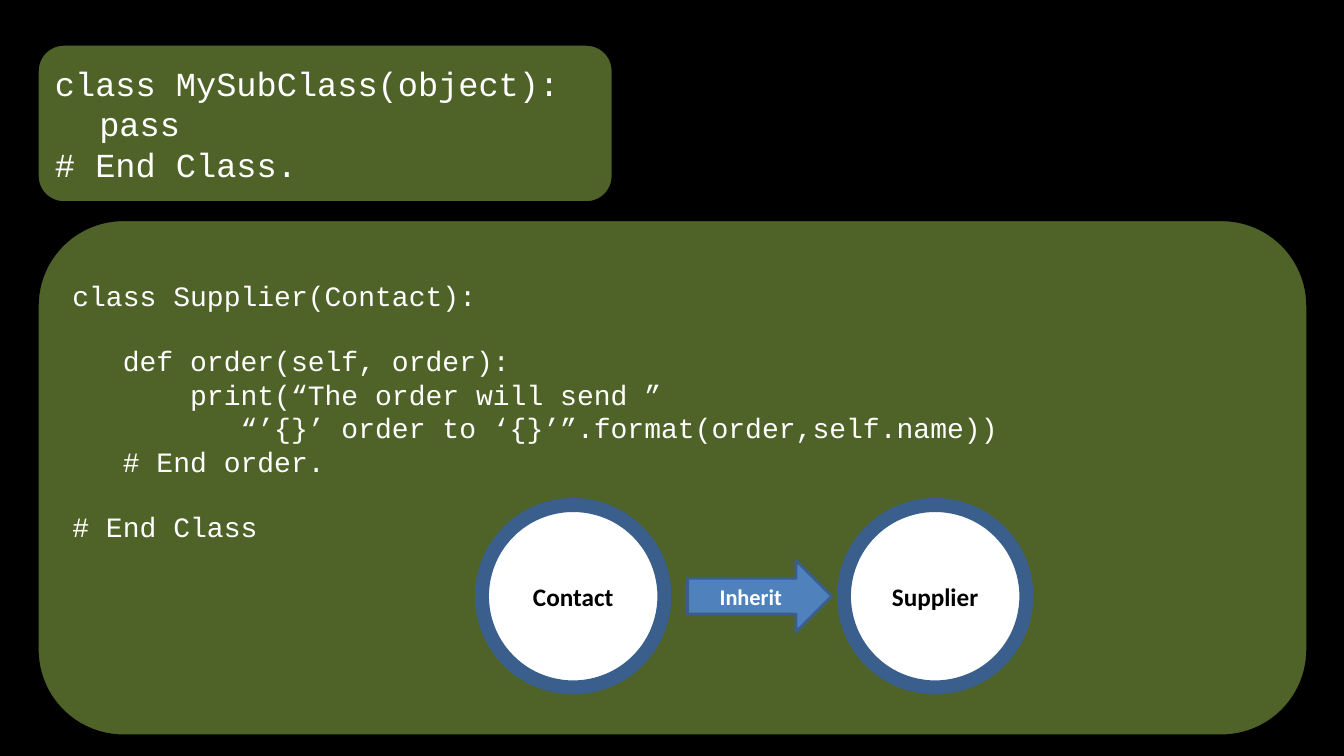
from dataclasses import dataclass

import pptx
import pptx.dml.color
import pptx.enum.shapes
import pptx.enum.text
import pptx.util

Inches = pptx.util.Inches
Pt = pptx.util.Pt
SHAPE = pptx.enum.shapes.MSO_SHAPE
ALIGN = pptx.enum.text.PP_ALIGN
ANCHOR = pptx.enum.text.MSO_ANCHOR


def rgb(code):
    return pptx.dml.color.RGBColor.from_string(code)


@dataclass(frozen=True)
class Theme:
    background: str = "000000"
    panel: str = "4F6228"
    panel_line: str = "000000"
    code_text: str = "FFFFFF"
    circle: str = "FFFFFF"
    circle_text: str = "000000"
    arrow: str = "4F81BD"
    arrow_text: str = "FFFFFF"
    diagram_line: str = "3A5F8C"
    code_font: str = "Courier New"
    label_font: str = "Calibri"
    short_code_size: int = 24
    long_code_size: int = 20
    circle_size: int = 18
    arrow_size: int = 16
    thin_line: int = 2
    thick_line: int = 10


THEME = Theme()
CODE_LINE_HEIGHT = 1.133  # line height of the code font, in ems

# Each code line: text, left margin in inches, skipped lines before it
SUBCLASS_CODE = [
    ("class MySubClass(object):", 0, 0),
    ("pass", 0.44, 0),
    ("# End Class.", 0, 0),
]
SUPPLIER_CODE = [
    ("class Supplier(Contact):", 0, 0),
    ("   def order(self, order):", 0, 1),
    ("       print(“The order will send ”", 0, 0),
    ("          “’{}’ order to ‘{}’”.format(order,self.name))", 0, 0),
    ("   # End order.", 0, 0),
    ("# End Class", 0, 1),
]


def add_box(s, kind, box, fill, line, line_width):
    sp = s.shapes.add_shape(kind, *(Inches(v) for v in box))
    sp.shadow.inherit = False
    sp.fill.solid()
    sp.fill.fore_color.rgb = rgb(fill)
    sp.line.color.rgb = rgb(line)
    sp.line.width = Pt(line_width)
    sp.text_frame.word_wrap = True
    return sp


def style_font(p, name, size, color, bold=False):
    p.font.name = name
    p.font.size = Pt(size)
    p.font.color.rgb = rgb(color)
    p.font.bold = bold


def add_code_panel(s, box, lines, size, anchor=ANCHOR.MIDDLE, top_margin=0.05):
    sp = add_box(s, SHAPE.ROUNDED_RECTANGLE, box, THEME.panel,
                 THEME.panel_line, THEME.thin_line)
    tf = sp.text_frame
    tf.vertical_anchor = anchor
    tf.margin_top = Inches(top_margin)
    for i, (text, margin, skipped) in enumerate(lines):
        p = tf.add_paragraph() if i else tf.paragraphs[0]
        p.text = text
        p.alignment = ALIGN.LEFT
        if margin:
            p._p.get_or_add_pPr().set("marL", str(Inches(margin)))
        if skipped:
            p.space_before = Pt(skipped * size * CODE_LINE_HEIGHT)
        style_font(p, THEME.code_font, size, THEME.code_text)


def add_label(sp, text, size, color):
    tf = sp.text_frame
    tf.vertical_anchor = ANCHOR.MIDDLE
    p = tf.paragraphs[0]
    p.text = text
    p.alignment = ALIGN.CENTER
    style_font(p, THEME.label_font, size, color, bold=True)


def add_inheritance_diagram(s, box):
    """Put a circle at each end of the box and an arrow between them."""
    left, top, width, diameter = box
    for name, x in (("Contact", left), ("Supplier", left + width - diameter)):
        circle = add_box(s, SHAPE.OVAL, (x, top, diameter, diameter),
                         THEME.circle, THEME.diagram_line, THEME.thick_line)
        add_label(circle, name, THEME.circle_size, THEME.circle_text)

    arrow_width, arrow_height = 1.43, 0.71
    arrow_box = (left + diameter + 0.23, top + (diameter - arrow_height) / 2,
                 arrow_width, arrow_height)
    arrow = add_box(s, SHAPE.RIGHT_ARROW, arrow_box, THEME.arrow,
                    THEME.diagram_line, THEME.thin_line)
    add_label(arrow, "Inherit", THEME.arrow_size, THEME.arrow_text)


def main():
    prs = pptx.Presentation()
    prs.slide_width = Inches(13.33)
    prs.slide_height = Inches(7.5)
    s = prs.slides.add_slide(prs.slide_layouts[6])
    s.background.fill.solid()
    s.background.fill.fore_color.rgb = rgb(THEME.background)

    add_code_panel(s, (0.37, 0.44, 5.71, 1.57), SUBCLASS_CODE,
                   THEME.short_code_size)
    add_code_panel(s, (0.37, 2.18, 12.6, 5.12), SUPPLIER_CODE,
                   THEME.long_code_size, ANCHOR.TOP, top_margin=0.33)
    add_inheritance_diagram(s, (4.78, 5.01, 5.4, 1.81))
    prs.save("out.pptx")


if __name__ == "__main__":
    main()
